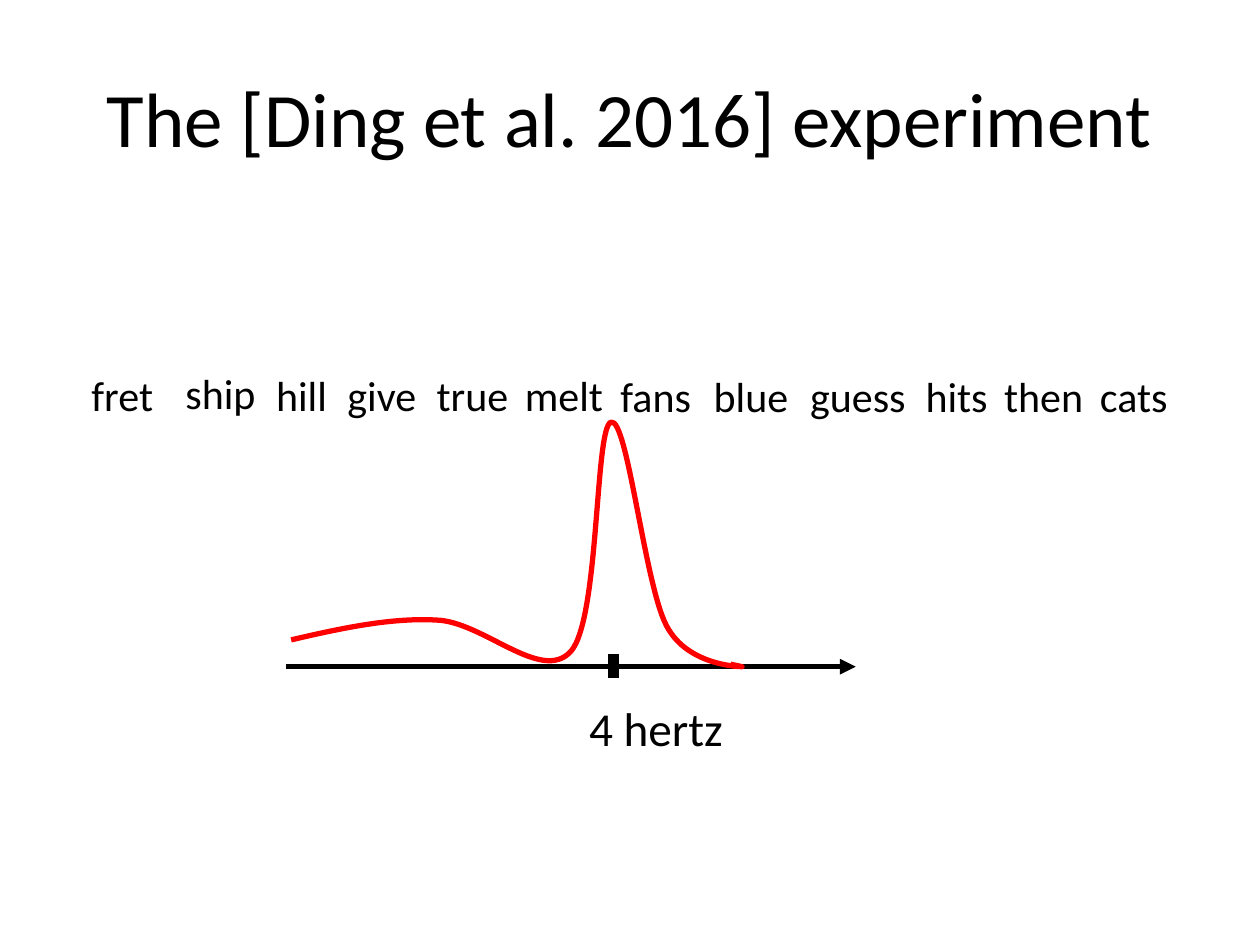
from lxml.etree import SubElement as Sub
from pptx import Presentation
from pptx.dml.color import RGBColor
from pptx.enum.shapes import MSO_CONNECTOR as Kind
from pptx.enum.text import MSO_ANCHOR as Anchor, MSO_AUTO_SIZE as Auto, PP_ALIGN as Align
from pptx.oxml.ns import qn
from pptx.util import Cm, Pt

TITLE = "The [Ding et al. 2016] experiment"
FONT, BLACK, RED = "Calibri", "000000", "FF0000"
WORDS = [
    ("fret", 1.55, 7.32, 1.83), ("ship", 3.48, 7.29, 1.93),
    ("hill", 5.28, 7.32, 1.6), ("give", 6.71, 7.32, 1.98),
    ("true", 8.51, 7.32, 2.03), ("melt", 10.29, 7.32, 2.16),
    ("fans", 12.24, 7.34, 1.96), ("blue", 14.1, 7.34, 2.08),
    ("guess", 16.05, 7.34, 2.49), ("hits", 18.36, 7.34, 1.85),
    ("then", 19.96, 7.34, 2.16), ("cats", 21.89, 7.34, 1.93),
]
LABEL = ("4 hertz", 11.61, 13.97, 3.23)
AXIS = (5.77, 13.44, 17.25, 13.44)
TICK = (12.37, 13.18, 12.37, 13.67)
START = (5.87, 12.9)
CURVES = [
    [(6.86, 12.67), (7.87, 12.45), (8.79, 12.5)],
    [(9.73, 12.52), (10.92, 13.79), (11.51, 13.13)],
    [(12.09, 12.47), (11.99, 8.59), (12.32, 8.51)],
    [(12.65, 8.41), (13, 11.81), (13.44, 12.62)],
    [(13.87, 13.44), (14.96, 13.44), (14.96, 13.44)],
]
END = (14.73, 13.39)


def color(code):
    return RGBColor.from_string(code)


def write(frame, text, size):
    para = frame.paragraphs[0]
    para.alignment = Align.CENTER
    run = para.add_run()
    run.text = text
    run.font.name, run.font.size = FONT, Pt(size)
    run.font.color.rgb = color(BLACK)


def label(slide, text, left, top, width, height, size):
    box = slide.shapes.add_textbox(Cm(left), Cm(top), Cm(width), Cm(height))
    box.text_frame.word_wrap = False
    box.text_frame.auto_size = Auto.SHAPE_TO_FIT_TEXT
    write(box.text_frame, text, size)


def stroke(shape, code, width):
    shape.line.color.rgb = color(code)
    shape.line.width = Pt(width)


def line(slide, ends, width):
    link = slide.shapes.add_connector(Kind.STRAIGHT, *map(Cm, ends))
    stroke(link, BLACK, width)
    Sub(link._element.spPr, qn("a:effectLst"))
    return link


def wave(slide):
    """Draw the spectrum as one freeform, bending its segments into Bezier curves."""
    stops = [curve[-1] for curve in CURVES] + [END]
    pen = slide.shapes.build_freeform(Cm(START[0]), Cm(START[1]))
    pen.add_line_segments([(Cm(x), Cm(y)) for x, y in stops], close=False)
    shape = pen.convert_to_shape()
    shape.shadow.inherit = False
    shape.fill.background()
    stroke(shape, RED, 3)
    steps = list(shape._element.iter(qn("a:lnTo")))
    for step, curve in zip(steps, CURVES):
        bend = step.makeelement(qn("a:cubicBezTo"))
        for x, y in curve:
            Sub(bend, qn("a:pt"), x=str(Cm(x) - shape.left), y=str(Cm(y) - shape.top))
        step.getparent().replace(step, bend)


def main():
    deck = Presentation()
    deck.slide_width, deck.slide_height = Cm(25.4), Cm(19.05)
    slide = deck.slides.add_slide(deck.slide_layouts[5])
    title = slide.shapes.title
    title.left, title.top, title.width, title.height = map(Cm, (1.27, 0.76, 22.86, 3.18))
    title.text_frame.vertical_anchor = Anchor.MIDDLE
    write(title.text_frame, TITLE, 44)
    for word in WORDS:
        label(slide, *word, 1.27, 24)
    axis = line(slide, AXIS, 3)
    Sub(axis.line._get_or_add_ln(), qn("a:tailEnd"), type="triangle")
    wave(slide)
    label(slide, *LABEL, 1.42, 27)
    line(slide, TICK, 6)
    deck.save("out.pptx")


if __name__ == "__main__":
    main()
